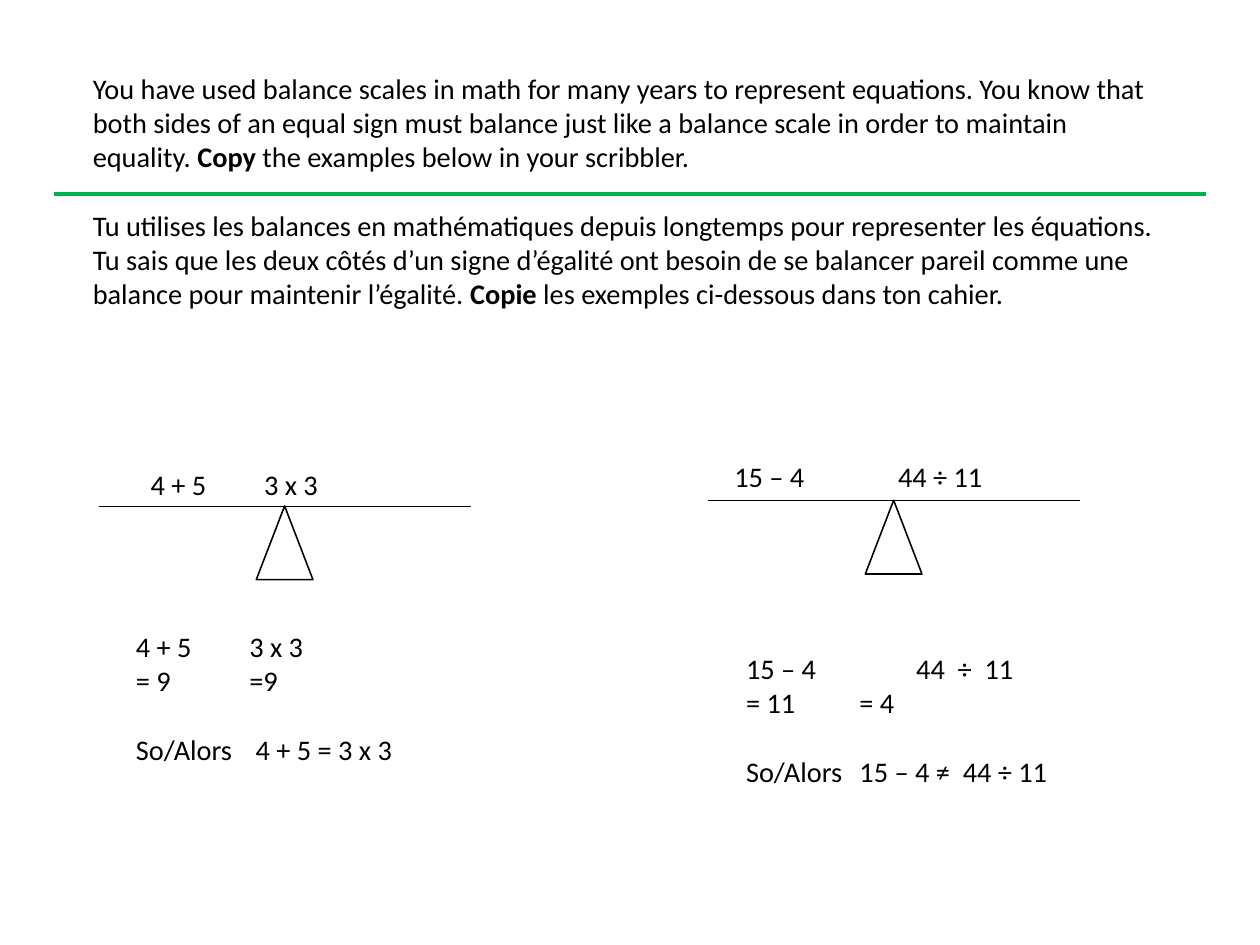
"""Build a bilingual slide on balance scales and equality."""
from lxml.etree import SubElement as Sub
from pptx import Presentation
from pptx.dml.color import RGBColor as RGB
from pptx.enum.shapes import MSO_CONNECTOR as Link, MSO_SHAPE as Form
from pptx.oxml.ns import qn
from pptx.util import Pt

SCALE = 9144
COLORS = {"ink": "000000", "rule": "00B050", "paper": "FFFFFF"}


def px(n):
    return n * SCALE


class Board:
    def __init__(self, slide, font="Calibri", size=18, gap=22):
        self.slide, self.font, self.size, self.gap = slide, font, size, gap
        fill = slide.background.fill
        fill.solid()
        fill.fore_color.rgb = RGB.from_string(COLORS["paper"])

    def text(self, x, y, w, h, *paras):
        box = self.slide.shapes.add_textbox(px(x), px(y), px(w), px(h))
        frame = box.text_frame
        frame.word_wrap = True
        for i, runs in enumerate(paras):
            para = frame.paragraphs[0] if i == 0 else frame.add_paragraph()
            if i and i == len(paras) - 1:
                para.space_before = Pt(self.gap)
            for j, words in enumerate(runs):
                run = para.add_run()
                run.text = words
                font = run.font
                font.name, font.size, font.bold = self.font, Pt(self.size), j == 1
                font.color.rgb = RGB.from_string(COLORS["ink"])

    def line(self, x, y, end, color, width, parent=None):
        shapes = (parent or self.slide).shapes
        line = shapes.add_connector(Link.STRAIGHT, px(x), px(y), px(end), px(y))
        line.line.color.rgb = RGB.from_string(COLORS[color])
        line.line.width = Pt(width)
        Sub(line._element.spPr, qn("a:effectLst"))

    def scale(self, mid, y, arm=164, base=50, tall=65):
        group = self.slide.shapes.add_group_shape()
        stand = group.shapes.add_shape(
            Form.ISOSCELES_TRIANGLE, px(mid - base // 2), px(y), px(base), px(tall))
        stand.shadow.inherit = False
        stand.fill.background()
        stand.line.color.rgb = RGB.from_string(COLORS["ink"])
        stand.line.width = Pt(1)
        self.line(mid - arm, y, mid + arm, "ink", 0.5, group)


def main():
    deck = Presentation()
    deck.slide_width, deck.slide_height = px(1111), px(833)
    board = Board(deck.slides.add_slide(deck.slide_layouts[6]))

    board.text(
        72, 58, 970, 222,
        ["You have used balance scales in math for many years to represent "
         "equations. You know that both sides of an equal sign must balance just "
         "like a balance scale in order to maintain equality. ",
         "Copy", " the examples below in your scribbler."],
        ["Tu utilises les balances en mathématiques depuis longtemps pour "
         "representer les équations. Tu sais que les deux côtés d’un signe "
         "d’égalité ont besoin de se balancer pareil comme une balance pour "
         "maintenir l’égalité. ",
         "Copie", " les exemples ci-dessous dans ton cahier."])
    board.line(48, 171, 1063, "rule", 2.25)

    board.scale(251, 446)
    board.text(123, 407, 454, 40, ["4 + 5\t\t3 x 3"])
    board.text(110, 550, 380, 131, ["4 + 5\t\t3 x 3"], ["= 9\t\t=9"],
               ["So/Alors\t 4 + 5 = 3 x 3"])

    board.scale(788, 441)
    board.text(632, 400, 386, 40, [" 15 – 4\t\t44 ÷ 11"])
    board.text(648, 569, 329, 131, ["15 – 4\t\t44  ÷  11"], ["= 11\t\t= 4"],
               ["So/Alors\t15 – 4 ≠  44 ÷ 11"])

    deck.save("out.pptx")


if __name__ == "__main__":
    main()
